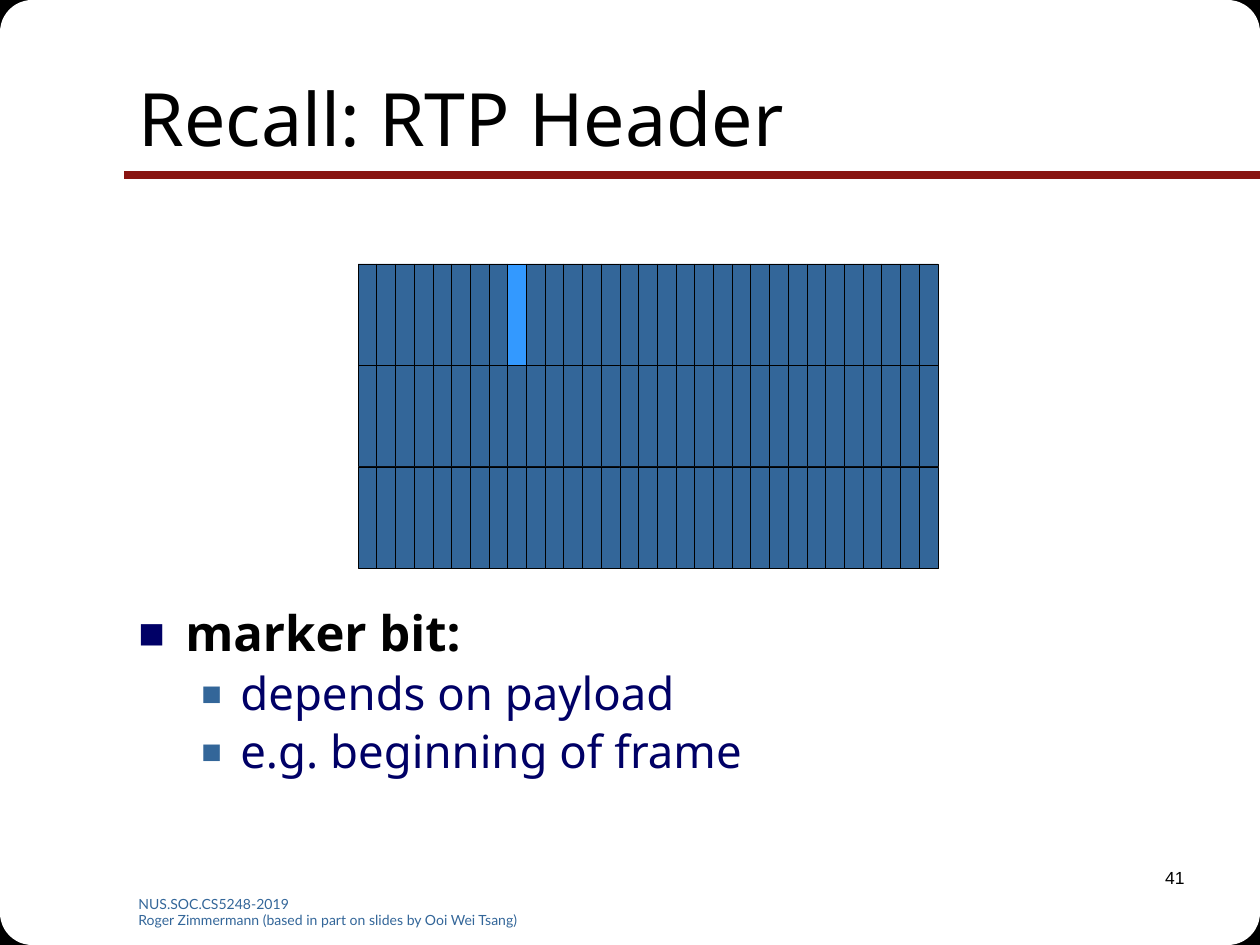
from lxml import etree
from pptx import Presentation
from pptx import util as u
from pptx.dml.color import RGBColor
from pptx.enum import shapes, text
from pptx.oxml import ns

PX = 914400 / 126  # EMU in one px
WIDTH, HEIGHT = 1260, 945

BLACK = RGBColor(0x00, 0x00, 0x00)
WHITE = RGBColor(0xFF, 0xFF, 0xFF)
RED = RGBColor(0x89, 0x14, 0x11)
STEEL = RGBColor(0x33, 0x66, 0x99)
BRIGHT = RGBColor(0x33, 0x99, 0xFF)
NAVY = RGBColor(0x00, 0x00, 0x66)

# Content
TITLE = "Recall: RTP Header"
BULLETS = [(0, "marker bit:"), (1, "depends on payload"), (1, "e.g. beginning of frame")]
FOOTER = ["NUS.SOC.CS5248-2019",
          "Roger Zimmermann (based in part on slides by Ooi Wei Tsang)"]
PAGE_NUMBER = "41"

# Header grid: rows of bits, with the marker bit highlighted
ROWS, COLUMNS = 3, 31
MARKER = (0, 8)
GRID_LEFT, GRID_TOP, GRID_WIDTH = 358, 264, 580
CELL_WIDTH, CELL_HEIGHT, ROW_PITCH = 19, 101, 101.5
COLUMN_PITCH = (GRID_WIDTH - CELL_WIDTH) / (COLUMNS - 1)

# Bullet levels: size, bold, text colour, bullet colour, bullet %, margin, hang, space before
LEVELS = [
    (28, True, BLACK, NAVY, 90, 47, 47, 0),
    (26, False, NAVY, STEEL, 75, 102, 39, 5.25),
]


def px(value):
    return u.Emu(round(value * PX))


def add_box(slide, kind, left, top, width, height, fill, line=None, line_width=0.25):
    shape = slide.shapes.add_shape(kind, px(left), px(top), px(width), px(height))
    shape.shadow.inherit = False
    shape.fill.solid()
    shape.fill.fore_color.rgb = fill
    if line is None:
        shape.line.fill.background()
    else:
        shape.line.color.rgb = line
        shape.line.width = u.Pt(line_width)
    return shape


def add_text(slide, left, top, width, height, lines):
    box = slide.shapes.add_textbox(px(left), px(top), px(width), px(height))
    box.text_frame.word_wrap = True
    box.text_frame.text = "\n".join(lines)
    return box.text_frame


def style(paragraph, font, size, color, bold=False):
    for run in paragraph.runs:
        run.font.name = font
        run.font.size = u.Pt(size)
        run.font.color.rgb = color
        run.font.bold = bold


def add_bullet(paragraph, color, percent, margin, hang):
    properties = paragraph._p.get_or_add_pPr()
    properties.set("marL", str(px(margin)))
    properties.set("indent", str(px(-hang)))
    bullet_color = etree.SubElement(properties, ns.qn("a:buClr"))
    etree.SubElement(bullet_color, ns.qn("a:srgbClr"), val=str(color))
    etree.SubElement(properties, ns.qn("a:buSzPct"), val=str(percent * 1000))
    etree.SubElement(properties, ns.qn("a:buFont"), typeface="Arial")
    etree.SubElement(properties, ns.qn("a:buChar"), char="■")


def add_frame(slide):
    # Black corners under white rounded squares
    corners = [(right, bottom) for right in (0, 1) for bottom in (0, 1)]
    for kind, size, fill, line in [
        (shapes.MSO_SHAPE.RECTANGLE, 54, BLACK, BLACK),
        (shapes.MSO_SHAPE.ROUNDED_RECTANGLE, 193, WHITE, None),
    ]:
        for right, bottom in corners:
            add_box(slide, kind, right * (WIDTH - size), bottom * (HEIGHT - size),
                    size, size, fill, line, 0.75)

    # Rule under the title
    rule = slide.shapes.add_connector(
        shapes.MSO_CONNECTOR.STRAIGHT, px(WIDTH), px(175), px(124), px(175))
    rule.line.color.rgb = RED
    rule.line.width = u.Pt(4.5)
    etree.SubElement(rule._element.spPr, ns.qn("a:effectLst"))

    # Footer and page number
    for paragraph in add_text(slide, 126, 889, 431, 35, FOOTER).paragraphs:
        style(paragraph, "Lato", 8, STEEL)
    number = add_text(slide, 935, 861, 262, 63, [PAGE_NUMBER]).paragraphs[0]
    number.alignment = text.PP_ALIGN.RIGHT
    style(number, "Arial", 10, BLACK)


def add_title(slide):
    title = slide.shapes.title
    # Bring the placeholder in front of the corner shapes
    title._element.getparent().append(title._element)
    title.left, title.top, title.width, title.height = map(px, (126, 38, 1071, 158))
    title.text_frame.text = TITLE
    title.text_frame.vertical_anchor = text.MSO_ANCHOR.MIDDLE
    paragraph = title.text_frame.paragraphs[0]
    paragraph.alignment = text.PP_ALIGN.LEFT
    style(paragraph, "Noto Sans", 42, BLACK)


def add_body(slide):
    frame = add_text(slide, 126, 603, 1071, 241, [line for _, line in BULLETS])
    for paragraph, (level, _) in zip(frame.paragraphs, BULLETS):
        size, bold, color, bullet_color, percent, margin, hang, before = LEVELS[level]
        paragraph.level = level
        paragraph.line_spacing = 0.9
        paragraph.space_before = u.Pt(before)
        add_bullet(paragraph, bullet_color, percent, margin, hang)
        style(paragraph, "Noto Sans", size, color, bold)


def add_grid(slide):
    for row in range(ROWS):
        for column in range(COLUMNS):
            fill = BRIGHT if (row, column) == MARKER else STEEL
            add_box(slide, shapes.MSO_SHAPE.RECTANGLE,
                    GRID_LEFT + column * COLUMN_PITCH, GRID_TOP + row * ROW_PITCH,
                    CELL_WIDTH, CELL_HEIGHT, fill, BLACK)


def main():
    presentation = Presentation()
    presentation.slide_width, presentation.slide_height = px(WIDTH), px(HEIGHT)
    slide = presentation.slides.add_slide(presentation.slide_layouts[5])
    slide.background.fill.solid()
    slide.background.fill.fore_color.rgb = WHITE
    add_frame(slide)
    add_title(slide)
    add_body(slide)
    add_grid(slide)
    presentation.save("out.pptx")


if __name__ == "__main__":
    main()
